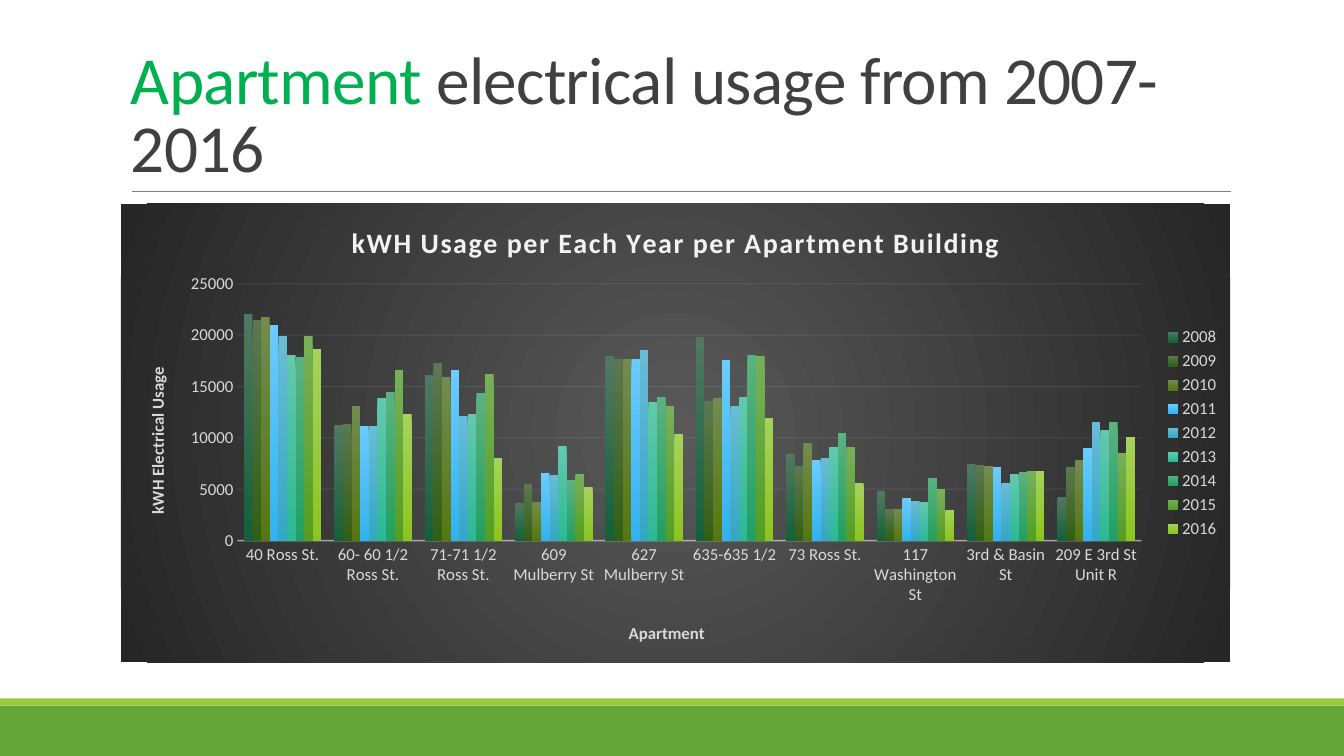
from lxml import etree
from pptx import Presentation
from pptx.chart.data import CategoryChartData
from pptx.dml.color import RGBColor
from pptx.enum.chart import XL_CHART_TYPE, XL_LEGEND_POSITION, XL_TICK_MARK
from pptx.enum.shapes import MSO_CONNECTOR, MSO_SHAPE
from pptx.enum.text import MSO_ANCHOR
from pptx.oxml import parse_xml
from pptx.oxml.ns import nsdecls, qn
from pptx.util import Inches, Pt

CLUSTERED = XL_CHART_TYPE.COLUMN_CLUSTERED
LEGEND_RIGHT = XL_LEGEND_POSITION.RIGHT
NO_TICK = XL_TICK_MARK.NONE
STRAIGHT = MSO_CONNECTOR.STRAIGHT
RECTANGLE = MSO_SHAPE.RECTANGLE
BOTTOM = MSO_ANCHOR.BOTTOM

FONT = "Calibri"
WIDTH, HEIGHT = 13.33, 7.5
LEFT, CONTENT_WIDTH = 1.2, 11

APARTMENTS = ["40 Ross St.", "60- 60 1/2 Ross St.", "71-71 1/2 Ross St.",
              "609 Mulberry St", "627 Mulberry St", "635-635 1/2", "73 Ross St.",
              "117 Washington St", "3rd & Basin St", "209 E 3rd St Unit R"]
USAGE = {
    "2008": ("507961", "15603A", [22100, 11300, 16100, 3700, 18000, 19800, 8400, 4800, 7500, 4200]),
    "2009": ("5C7850", "325F15", [21500, 11400, 17300, 5500, 17700, 13600, 7300, 3100, 7400, 7200]),
    "2010": ("728C4F", "557711", [21800, 13100, 15900, 3800, 17700, 13900, 9500, 3100, 7300, 7800]),
    "2011": ("6BCBFD", "32B2EF", [21000, 11200, 16600, 6600, 17700, 17600, 7800, 4100, 7200, 9000]),
    "2012": ("68BCD6", "35A6C5", [19900, 11200, 12100, 6400, 18600, 13100, 8000, 3900, 5600, 11500]),
    "2013": ("62C9AE", "2CB997", [18100, 13900, 12300, 9200, 13500, 14000, 9100, 3800, 6500, 10800]),
    "2014": ("5AB281", "22A061", [17900, 14500, 14400, 5900, 14000, 18100, 10500, 6100, 6700, 11500]),
    "2015": ("77B05A", "549E23", [19900, 16600, 16200, 6500, 13100, 18000, 9100, 5000, 6800, 8500]),
    "2016": ("A5D35B", "8CC41F", [18700, 12300, 8000, 5200, 10400, 11900, 5600, 3000, 6800, 10100]),
}


def color(value):
    return RGBColor.from_string(value)


def style_font(font, size, value, bold=False):
    font.name, font.size, font.bold = FONT, Pt(size), bold
    font.color.rgb = color(value)


def space_letters(run, points):
    run._r.get_or_add_rPr().set("spc", str(round(points * 100)))


def add_band(slide, top, height, fill):
    band = slide.shapes.add_shape(RECTANGLE, 0, Inches(top), Inches(WIDTH), Inches(height))
    band.shadow.inherit = False
    band.fill.solid()
    band.fill.fore_color.rgb = color(fill)
    band.line.fill.background()


def add_title(slide, left, top, width, height):
    rule_top = Inches(top + height)
    rule = slide.shapes.add_connector(STRAIGHT, Inches(left + 0.11), rule_top,
                                      Inches(left + width + 0.01), rule_top)
    rule.line.color.rgb = color("808080")
    rule.line.width = Pt(0.5)
    etree.SubElement(rule._element.spPr, qn("a:effectLst"))

    box = slide.shapes.add_textbox(Inches(left), Inches(top), Inches(width), Inches(height))
    frame = box.text_frame
    frame.word_wrap = True
    frame.vertical_anchor = BOTTOM
    paragraph = frame.paragraphs[0]
    paragraph.line_spacing = 0.85
    for text, value in (("Apartment ", "00B050"), ("electrical usage from 2007-2016", "404040")):
        run = paragraph.add_run()
        run.text = text
        style_font(run.font, 48, value)
        space_letters(run, -0.5)


def set_layout(element, left, top, width=None, height=None):
    for old in element.findall(qn("c:layout")):
        element.remove(old)
    settings = [("xMode", "edge"), ("yMode", "edge"), ("x", left), ("y", top)]
    if width:
        settings = [("layoutTarget", "inner")] + settings + [("w", width), ("h", height)]
    layout = etree.Element(qn("c:layout"))
    manual = etree.SubElement(layout, qn("c:manualLayout"))
    for tag, value in settings:
        etree.SubElement(manual, qn(f"c:{tag}")).set("val", str(value))
    text = element.find(qn("c:tx"))
    element.insert(0 if text is None else element.index(text) + 1, layout)


def write_chart_title(owner, text, size, value):
    frame = owner.text_frame
    frame.text = text
    style_font(frame.paragraphs[0].font, size, value, True)
    return frame.paragraphs[0].runs[0]


def style_axis(axis, title):
    axis.major_tick_mark = axis.minor_tick_mark = NO_TICK
    style_font(axis.tick_labels.font, 12, "D9D9D9")
    write_chart_title(axis.axis_title, title, 12, "D9D9D9")


def style_line(line, width):
    line.color.rgb = color("F2F2F2")
    line.width = Pt(width)


def add_opacity(chart, query, percent):
    for element in chart.element.xpath(query):
        etree.SubElement(element, qn("a:alpha")).set("val", str(percent * 1000))


def fill_chart_area(chart, center, edge):
    area = parse_xml(
        f'<c:spPr {nsdecls("c", "a")}><a:gradFill><a:gsLst>'
        f'<a:gs pos="0"><a:srgbClr val="{center}"/></a:gs>'
        f'<a:gs pos="100000"><a:srgbClr val="{edge}"/></a:gs></a:gsLst>'
        '<a:path path="circle"><a:fillToRect l="50000" t="50000" r="50000" b="50000"/></a:path>'
        '</a:gradFill><a:ln><a:noFill/></a:ln></c:spPr>')
    chart.element.find(qn("c:chart")).addnext(area)


def add_usage_chart(slide, left, top, width, height):
    data = CategoryChartData(number_format="0")
    data.categories = APARTMENTS
    for year, (_, _, values) in USAGE.items():
        data.add_series(year, values)
    chart = slide.shapes.add_chart(CLUSTERED, Inches(left), Inches(top),
                                   Inches(width), Inches(height), data).chart
    style_font(chart.font, 10, "000000")
    fill_chart_area(chart, "595959", "262626")
    chart.has_title = True
    title_run = write_chart_title(chart.chart_title,
                                  "kWH Usage per Each Year per Apartment Building", 20, "F2F2F2")
    space_letters(title_run, 1)
    chart.has_legend = True
    chart.legend.position = LEGEND_RIGHT
    chart.legend.include_in_layout = False
    style_font(chart.legend.font, 12, "D9D9D9")

    plot = chart.plots[0]
    plot.gap_width, plot.overlap, plot.vary_by_categories = 150, 0, False
    for series, (light, dark, _) in zip(plot.series, USAGE.values()):
        fill = series.format.fill
        fill.gradient()
        fill.gradient_angle = 270
        for stop, value in zip(fill.gradient_stops, (light, dark)):
            stop.color.rgb = color(value)

    apartment_axis, usage_axis = chart.category_axis, chart.value_axis
    style_axis(apartment_axis, "Apartment")
    style_axis(usage_axis, "kWH Electrical Usage")
    style_line(apartment_axis.format.line, 1)
    usage_axis.format.line.fill.background()
    usage_axis.minimum_scale, usage_axis.maximum_scale, usage_axis.major_unit = 0, 25000, 5000
    usage_axis.has_major_gridlines = True
    style_line(usage_axis.major_gridlines.format.line, 0.75)
    add_opacity(chart, "//c:catAx/c:spPr//a:srgbClr", 54)
    add_opacity(chart, "//c:majorGridlines//a:srgbClr", 10)

    for query, layout in (("//c:plotArea", (0.105, 0.175, 0.815, 0.56)),
                          ("//c:catAx/c:title", (0.455, 0.905)),
                          ("//c:valAx/c:title", (0.02, 0.35))):
        set_layout(chart.element.xpath(query)[0], *(round(share, 3) for share in layout))


def main():
    presentation = Presentation()
    presentation.slide_width, presentation.slide_height = Inches(WIDTH), Inches(HEIGHT)
    slide = presentation.slides.add_slide(presentation.slide_layouts[6])
    add_band(slide, 7, 0.5, "63A537")
    add_band(slide, 6.93, 0.07, "99CB38")
    add_title(slide, LEFT, 0.31, CONTENT_WIDTH, 1.59)
    add_usage_chart(slide, LEFT, 2.02, CONTENT_WIDTH, 4.55)
    presentation.save("out.pptx")


if __name__ == "__main__":
    main()
